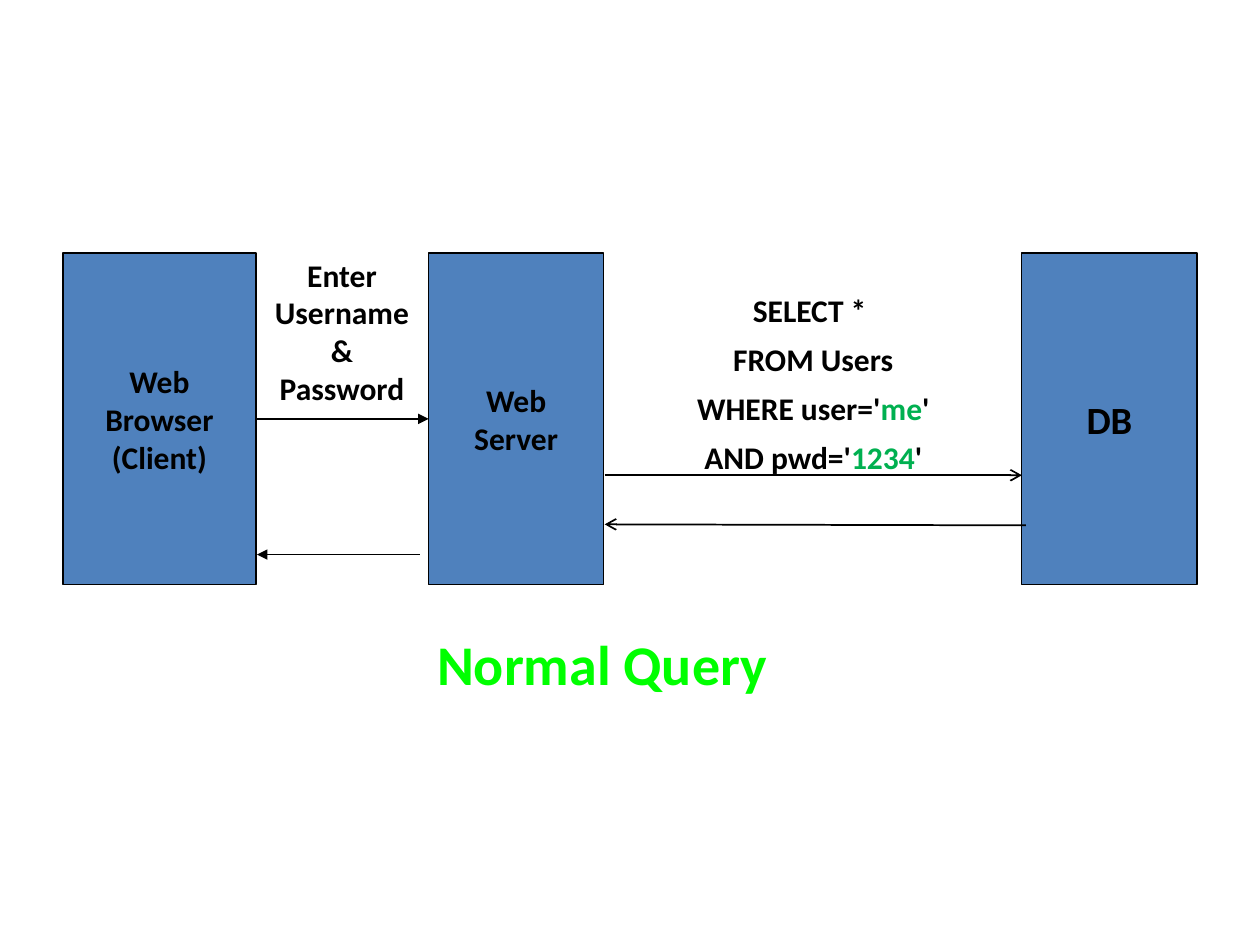
from lxml.etree import SubElement
from pptx import Presentation
from pptx.dml.color import RGBColor
from pptx.enum.shapes import MSO_CONNECTOR, MSO_SHAPE
from pptx.enum.text import MSO_ANCHOR, MSO_AUTO_SIZE, PP_ALIGN
from pptx.oxml.ns import qn
from pptx.util import Cm, Pt

BLACK = RGBColor(0x00, 0x00, 0x00)
BLUE = RGBColor(0x4F, 0x81, 0xBD)
GREEN = RGBColor(0x00, 0xB0, 0x50)
LIME = RGBColor(0x00, 0xFF, 0x00)

TITLE = "Normal Query"
BOX_TOP, BOX_HEIGHT = 5.1, 6.69

# name: (left, width, font size, lines)
BOXES = {
    "browser": (1.27, 3.89, 18, ["Web", "Browser", "(Client)"]),
    "server": (8.64, 3.53, 18, ["Web", "Server"]),
    "database": (20.6, 3.53, 22, ["DB"]),
}
LOGIN_LINES = ["Enter", "Username", "&", "Password"]
# Each line is a list of (text, colour) runs
QUERY_LINES = [
    [("SELECT * ", BLACK)],
    [("FROM Users", BLACK)],
    [("WHERE user='", BLACK), ("me", GREEN), ("'", BLACK)],
    [("AND pwd='", BLACK), ("1234", GREEN), ("'", BLACK)],
]
# (start x, start y, end x, end y, line width, arrowhead)
ARROWS = [
    (8.46, 11.18, 5.18, 11.18, 0.75, "triangle"),
    (12.19, 9.58, 20.6, 9.58, 1, "arrow"),
    (20.68, 10.59, 12.19, 10.57, 1, "arrow"),
]


def format_paragraph(paragraph, size, color=None):
    paragraph.alignment = PP_ALIGN.CENTER
    paragraph.font.name = "Calibri"
    paragraph.font.size = Pt(size)
    paragraph.font.bold = True
    if color is not None:
        paragraph.font.color.rgb = color


def write_lines(text_frame, lines, size):
    text_frame.text = "\n".join(lines)
    text_frame.word_wrap = False
    for paragraph in text_frame.paragraphs:
        format_paragraph(paragraph, size, BLACK)


def add_box(slide, left, width, size, lines):
    shape = slide.shapes.add_shape(
        MSO_SHAPE.RECTANGLE, Cm(left), Cm(BOX_TOP), Cm(width), Cm(BOX_HEIGHT))
    shape.shadow.inherit = False
    shape.fill.solid()
    shape.fill.fore_color.rgb = BLUE
    shape.line.color.rgb = BLACK
    shape.line.width = Pt(0.75)
    shape.text_frame.vertical_anchor = MSO_ANCHOR.MIDDLE
    write_lines(shape.text_frame, lines, size)
    return shape


def add_arrow(slide, start_x, start_y, end_x, end_y, width, head):
    connector = slide.shapes.add_connector(
        MSO_CONNECTOR.STRAIGHT, Cm(start_x), Cm(start_y), Cm(end_x), Cm(end_y))
    connector.line.color.rgb = BLACK
    connector.line.width = Pt(width)
    SubElement(connector.line._get_or_add_ln(), qn("a:tailEnd"), type=head)
    SubElement(connector._element.spPr, qn("a:effectLst"))
    return connector


def add_query(slide):
    text_box = slide.shapes.add_textbox(Cm(12.19), Cm(5.51), Cm(8.41), Cm(4.24))
    text_frame = text_box.text_frame
    text_frame.word_wrap = True
    for index, runs in enumerate(QUERY_LINES):
        paragraph = text_frame.add_paragraph() if index else text_frame.paragraphs[0]
        format_paragraph(paragraph, 18)
        paragraph.line_spacing = Pt(28)
        for text, color in runs:
            run = paragraph.add_run()
            run.text = text
            run.font.color.rgb = color


def set_title(slide):
    title = slide.shapes.title
    title.left, title.top, title.width, title.height = Cm(7.9), Cm(12.57), Cm(8.48), Cm(1.6)
    title.text_frame.text = TITLE
    title.text_frame.auto_size = MSO_AUTO_SIZE.NONE
    title.text_frame.vertical_anchor = MSO_ANCHOR.MIDDLE
    format_paragraph(title.text_frame.paragraphs[0], 32, LIME)


def main():
    presentation = Presentation()
    presentation.slide_width, presentation.slide_height = Cm(25.4), Cm(19.05)
    slide = presentation.slides.add_slide(presentation.slide_layouts[5])
    set_title(slide)

    boxes = {name: add_box(slide, *box) for name, box in BOXES.items()}

    login_arrow = add_arrow(slide, 0, 0, 0, 0, 0.75, "triangle")
    login_arrow.begin_connect(boxes["browser"], 3)
    login_arrow.end_connect(boxes["server"], 1)

    login = slide.shapes.add_textbox(Cm(5.03), Cm(5.03), Cm(3.73), Cm(3.3))
    write_lines(login.text_frame, LOGIN_LINES, 18)
    add_query(slide)

    for arrow in ARROWS:
        add_arrow(slide, *arrow)
    presentation.save("out.pptx")


if __name__ == "__main__":
    main()
